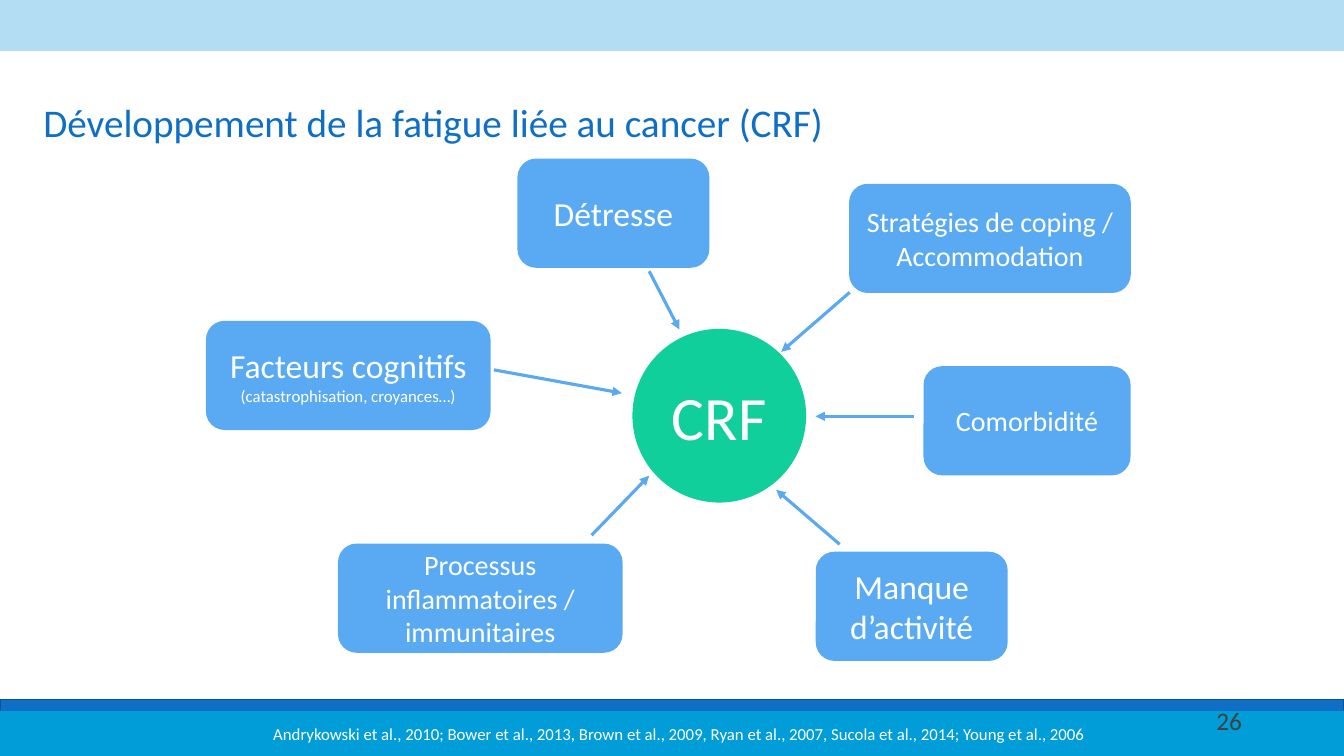
"""Build the slide on the factors behind cancer-related fatigue (CRF)."""
import dataclasses

import lxml.etree
import pptx
import pptx.dml.color
import pptx.enum.shapes
import pptx.enum.text
import pptx.oxml.ns
import pptx.util

Pt = pptx.util.Pt
Kind = pptx.enum.shapes.MSO_SHAPE
Align = pptx.enum.text.PP_ALIGN
Anchor = pptx.enum.text.MSO_ANCHOR
Fit = pptx.enum.text.MSO_AUTO_SIZE
qn = pptx.oxml.ns.qn


@dataclasses.dataclass(frozen=True)
class Theme:
    font: str = "Calibri"
    blue: str = "0F6FC6"
    edge: str = "0B5292"
    cyan: str = "009DD9"
    pale: str = "B3DDF2"
    sky: str = "59AAF2"
    green: str = "10CF9B"
    white: str = "FFFFFF"
    grey: str = "404040"
    note: int = 12
    page: int = 18
    text: int = 20
    large: int = 24
    head: int = 28
    core: int = 44


theme = Theme()


def write(shape, runs, color=theme.white, align=Align.CENTER, anchor=Anchor.MIDDLE):
    frame = shape.text_frame
    look = {"word_wrap": True, "auto_size": Fit.NONE, "vertical_anchor": anchor,
            "margin_left": Pt(7.2), "margin_right": Pt(7.2),
            "margin_top": Pt(3.6), "margin_bottom": Pt(3.6)}
    for key, value in look.items():
        setattr(frame, key, value)
    para = frame.paragraphs[0]
    para.alignment = align
    for words, size in runs:
        run = para.add_run()
        run.text = words
        for key, value in {"name": theme.font, "size": Pt(size), "bold": False}.items():
            setattr(run.font, key, value)
        run.font.color.rgb = pptx.dml.color.RGBColor.from_string(color)
    return para


def block(kind, box, fill, edge=None):
    shape = slide.shapes.add_shape(kind, *map(Pt, box))
    shape.shadow.inherit = False
    shape.fill.solid()
    shape.fill.fore_color.rgb = pptx.dml.color.RGBColor.from_string(fill)
    shape.line.color.rgb = pptx.dml.color.RGBColor.from_string(edge or fill)
    shape.line.width = Pt(1)
    return shape


deck = pptx.Presentation()
wide, high = 960, 540
deck.slide_width, deck.slide_height = Pt(wide), Pt(high)
slide = deck.slides.add_slide(deck.slide_layouts[5])

for top, tall, fill, edge in [
    (499.7, 40.3, theme.blue, theme.edge),
    (508.3, 31.7, theme.cyan, None),
    (0, 36, theme.pale, None),
]:
    block(Kind.RECTANGLE, (0, top, wide, tall), fill, edge)

title = slide.shapes.title
place = {"left": 23.8, "top": 53.3, "width": 911.5, "height": 50.4}
for key, value in place.items():
    setattr(title, key, Pt(value))
line = write(title, [("Développement de la fatigue liée au cancer (CRF)", theme.head)],
             theme.blue, Align.LEFT, Anchor.TOP)
line.line_spacing = 1.4

page = slide.shapes.add_textbox(Pt(678.2), Pt(500.4), Pt(216), Pt(28.8))
write(page, [("26", theme.page)], theme.grey, Align.RIGHT)

cite = slide.shapes.add_textbox(Pt(182.2), Pt(513.4), Pt(606.2), Pt(21.6))
write(cite, [("Andrykowski et al., 2010; Bower et al., 2013, Brown et al., 2009, "
              "Ryan et al., 2007, Sucola et al., 2014; Young et al., 2006", theme.note)],
      anchor=Anchor.TOP)

core = block(Kind.OVAL, (452.2, 235.4, 123.1, 123.1), theme.green)
write(core, [("CRF", theme.core)])

tall = 77
causes = [
    (370.1, 113.8, 136.1, [("Détresse", theme.large)]),
    (147.6, 229.7, 202.3, [("Facteurs cognitifs ", theme.large),
                           ("(catastrophisation, croyances…)", theme.note)]),
    (241.9, 388.8, 202.3, [("Processus inflammatoires / immunitaires", theme.text)]),
    (583.2, 394.6, 136.1, [("Manque d’activité", theme.large)]),
    (607, 131.8, 200.2, [("Stratégies de coping / Accommodation", theme.text)]),
    (660.2, 262.1, 146.9, [("Comorbidité", theme.text)]),
]
for left, top, width, runs in causes:
    write(block(Kind.ROUNDED_RECTANGLE, (left, top, width, tall), theme.sky), runs)

arrows = [
    (463.7, 193.7, 485.3, 235.4),
    (352.8, 264.2, 444.2, 280.8),
    (607, 208.8, 558, 251.3),
    (422.6, 382.3, 463.7, 339.8),
    (599.8, 388.8, 554.4, 349.9),
    (653, 297.4, 582.5, 297.4),
]
for ends in arrows:
    arrow = slide.shapes.add_connector(
        pptx.enum.shapes.MSO_CONNECTOR.STRAIGHT, *map(Pt, ends))
    arrow.line.color.rgb = pptx.dml.color.RGBColor.from_string(theme.sky)
    arrow.line.width = Pt(2.25)
    props = arrow.element.spPr
    lxml.etree.SubElement(props.find(qn("a:ln")), qn("a:tailEnd"), type="triangle")
    lxml.etree.SubElement(props, qn("a:effectLst"))

deck.save("out.pptx")
